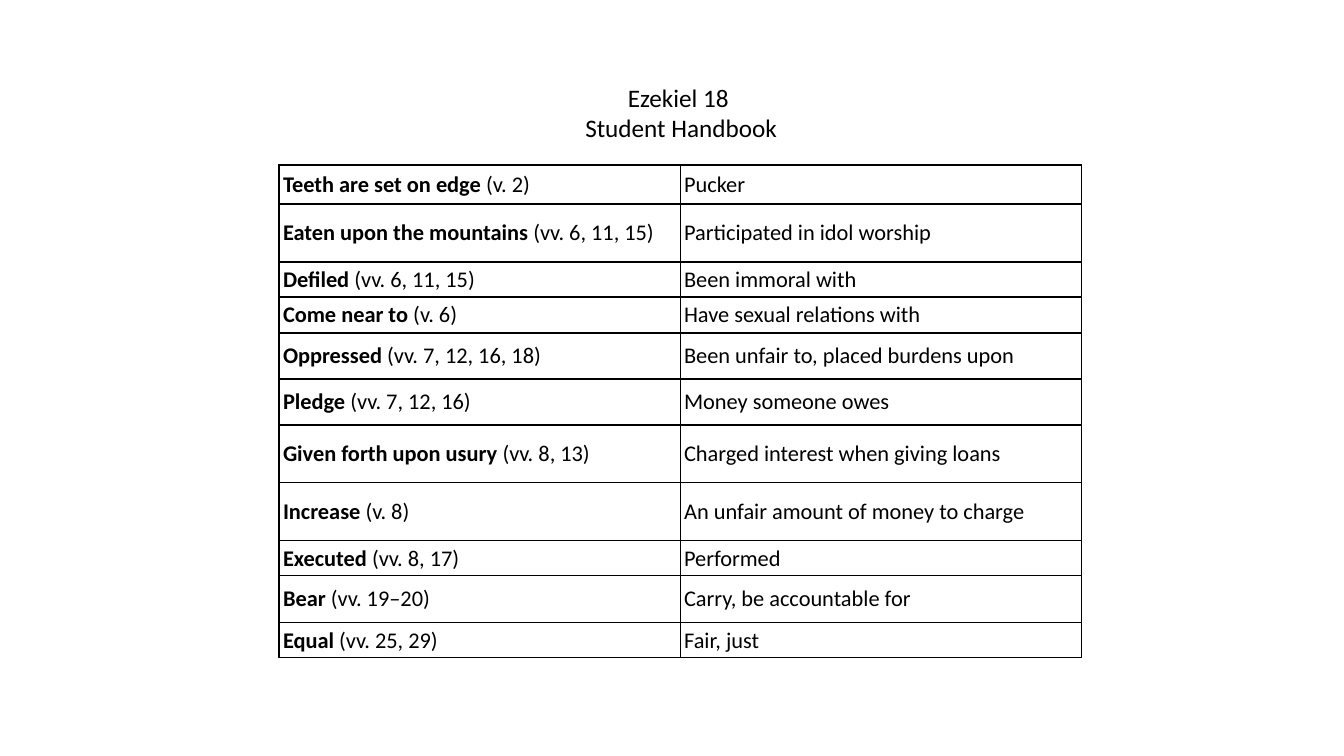
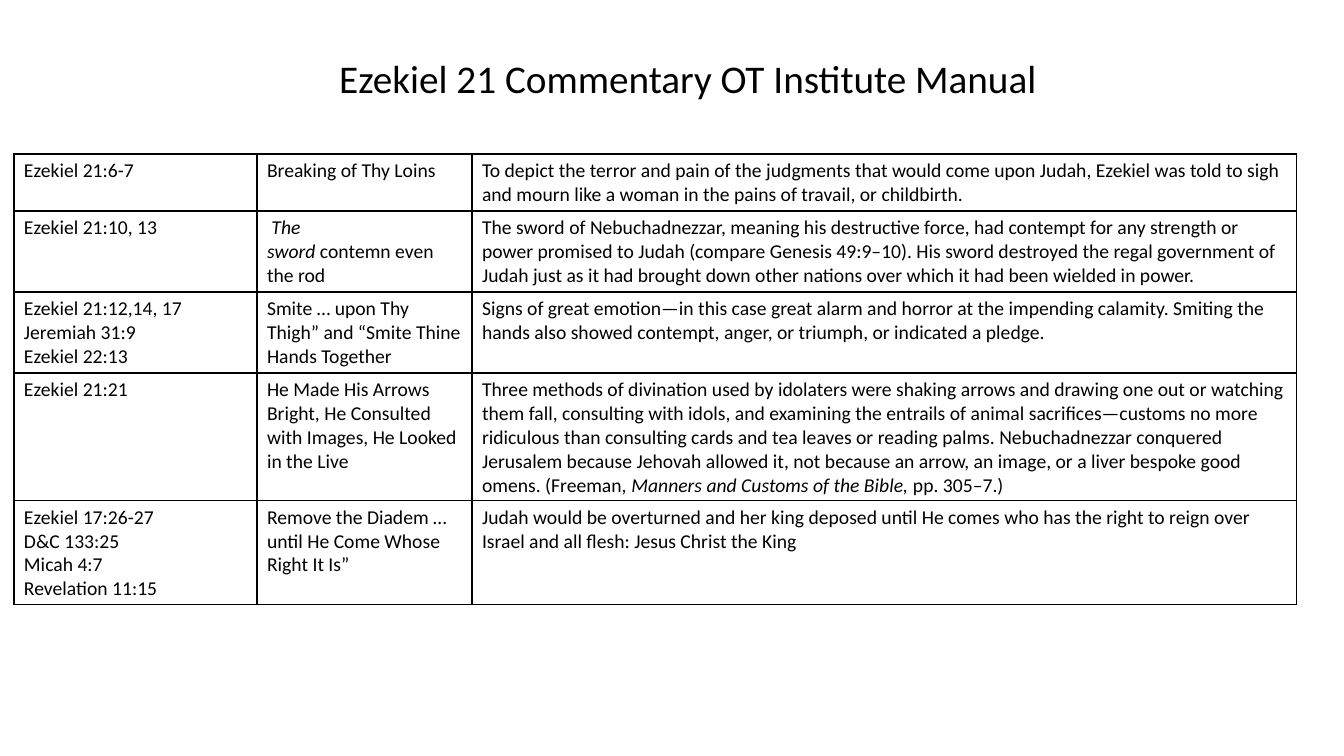
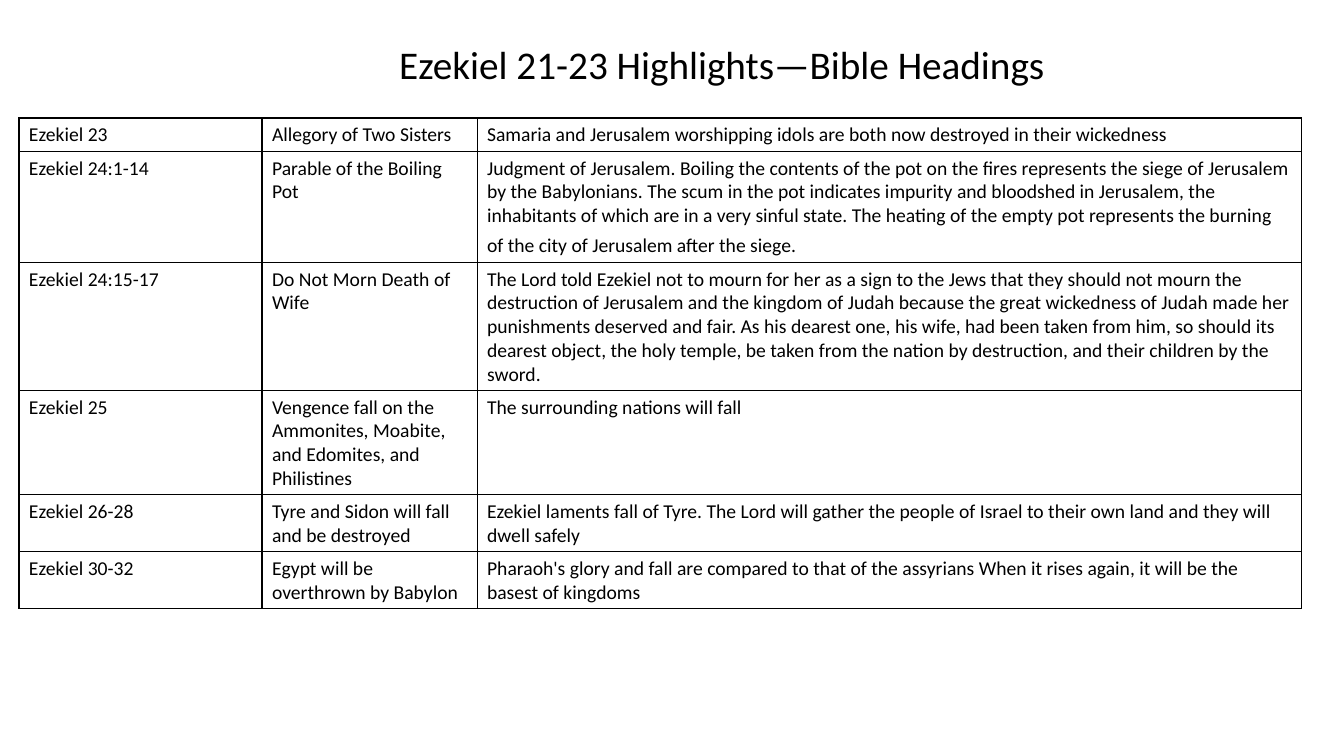
from dataclasses import dataclass
from typing import Optional, Tuple, Union

from lxml.etree import SubElement
from pptx import Presentation
from pptx.dml.color import RGBColor
from pptx.enum.text import MSO_ANCHOR, MSO_AUTO_SIZE, PP_ALIGN
from pptx.oxml.ns import qn
from pptx.util import Emu, Inches, Pt

NBSP = chr(160)
PX_PER_INCH = 100.8


def px(length: int) -> Emu:
    return Emu(round(length * 914400 / PX_PER_INCH))


# Shared look
@dataclass(frozen=True)
class Theme:
    font: str = "Calibri"
    ink: str = "000000"
    border_pt: int = 1
    heading_pt: int = 28
    small_heading_pt: int = 18
    glossary_pt: int = 16
    commentary_pt: int = 14


THEME = Theme()


@dataclass(frozen=True)
class Run:
    text: str
    bold: bool = False
    italic: bool = False
    size: Optional[int] = None


Content = Union[str, Tuple[Run, ...]]


@dataclass(frozen=True)
class Heading:
    text: str
    box: Tuple[int, int, int, int]
    size: int = THEME.heading_pt
    align: PP_ALIGN = PP_ALIGN.LEFT


@dataclass(frozen=True)
class Grid:
    left: int
    top: int
    columns: Tuple[int, ...]
    row_heights: Tuple[int, ...]
    rows: Tuple[Tuple[Content, ...], ...]
    size: int = THEME.commentary_pt
    anchor: MSO_ANCHOR = MSO_ANCHOR.TOP
    margins: Tuple[int, int] = (10, 5)


@dataclass(frozen=True)
class Page:
    heading: Heading
    grid: Grid


# Slide 1: words explained in Ezekiel 18
GLOSSARY = (
    ("Teeth are set on edge", "(v. 2)", "Pucker"),
    ("Eaten upon the mountains", "(vv. 6, 11, 15)", "Participated in idol worship"),
    ("Defiled", "(vv. 6, 11, 15)", "Been immoral with"),
    ("Come near to", "(v. 6)", "Have sexual relations with"),
    ("Oppressed", "(vv. 7, 12, 16, 18)", "Been unfair to, placed burdens upon"),
    ("Pledge", "(vv. 7, 12, 16)", "Money someone owes"),
    ("Given forth upon usury", "(vv. 8, 13)", "Charged interest when giving loans"),
    ("Increase", "(v. 8)", "An unfair amount of money to charge"),
    ("Executed", "(vv. 8, 17)", "Performed"),
    ("Bear", "(vv. 19–20)", "Carry, be accountable for"),
    ("Equal", "(vv. 25, 29)", "Fair, just"),
)

# Slide 2: commentary on Ezekiel 21
COMMENTARY = (
    ("Ezekiel 21:6-7", "Breaking of Thy Loins",
     "To depict the terror and pain of the judgments that would come upon Judah, Ezekiel was told "
     "to sigh and mourn like a woman in the pains of travail, or childbirth."),
    ("Ezekiel 21:10, 13",
     (Run(" The sword", italic=True), Run(f"{NBSP}contemn{NBSP}even the rod")),
     "The sword of Nebuchadnezzar, meaning his destructive force, had contempt for any strength or "
     f"power promised to Judah (compare{NBSP}Genesis 49:9–10). His sword destroyed the regal "
     "government of Judah just as it had brought down other nations over which it had been "
     "wielded in power."),
    ("Ezekiel 21:12,14, 17\nJeremiah 31:9\nEzekiel 22:13",
     "Smite … upon Thy Thigh” and “Smite Thine Hands Together",
     "Signs of great emotion—in this case great alarm and horror at the impending calamity. "
     "Smiting the hands also showed contempt, anger, or triumph, or indicated a pledge."),
    ("Ezekiel 21:21",
     "He Made His Arrows Bright, He Consulted with Images, He Looked in the Live",
     (Run("Three methods of divination used by idolaters were shaking arrows and drawing one out or "
          "watching them fall, consulting with idols, and examining the entrails of animal "
          "sacrifices—customs no more ridiculous than consulting cards and tea leaves or reading "
          "palms. Nebuchadnezzar conquered Jerusalem because Jehovah allowed it, not because an "
          f"arrow, an image, or a liver bespoke good omens. (Freeman,{NBSP}"),
      Run("Manners and Customs of the Bible,", italic=True),
      Run(f"{NBSP}pp.{NBSP}305–7.)"))),
    ("Ezekiel 17:26-27\nD&C 133:25\nMicah 4:7\nRevelation 11:15",
     "Remove the Diadem … until He Come Whose Right It Is”",
     "Judah would be overturned and her king deposed until He comes who has the right to reign "
     f"over Israel and all flesh:{NBSP}Jesus Christ{NBSP}the King"),
)

# Slide 3: chapter highlights
HIGHLIGHTS = (
    ("Ezekiel 23", "Allegory of Two Sisters",
     "Samaria and Jerusalem worshipping idols are both now destroyed in their wickedness"),
    ("Ezekiel 24:1-14", "Parable of the Boiling Pot",
     (Run("Judgment of Jerusalem. Boiling the contents of the pot on the fires represents the siege "
          "of Jerusalem by the Babylonians. The scum in the pot indicates impurity and bloodshed "
          "in Jerusalem, the inhabitants of which are in a very sinful state. The heating of the "
          "empty pot represents the burning of the city of Jerusalem after the siege."),
      Run(NBSP, size=THEME.small_heading_pt))),
    ("Ezekiel 24:15-17", "Do Not Morn Death of Wife",
     "The Lord told Ezekiel not to mourn for her as a sign to the Jews that they should not mourn "
     "the destruction of Jerusalem and the kingdom of Judah because the great wickedness of Judah "
     f"made her punishments deserved and fair.{NBSP}As his dearest one, his wife, had been taken "
     "from him, so should its dearest object, the holy temple, be taken from the nation by "
     "destruction, and their children by the sword."),
    ("Ezekiel 25", "Vengence fall on the Ammonites, Moabite, and Edomites, and Philistines",
     "The surrounding nations will fall"),
    ("Ezekiel 26-28", "Tyre and Sidon will fall and be destroyed",
     "Ezekiel laments fall of Tyre. The Lord will gather the people of Israel to their own land "
     "and they will dwell safely"),
    ("Ezekiel 30-32", "Egypt will be overthrown by Babylon",
     "Pharaoh's glory and fall are compared to that of the assyrians When it rises again, it will "
     "be the basest of kingdoms"),
)

COMMENTARY_COLUMNS = (243, 215, 824)

PAGES = (
    Page(
        Heading("Ezekiel 18 \nStudent Handbook", (555, 77, 252, 72),
                THEME.small_heading_pt, PP_ALIGN.CENTER),
        Grid(279, 165, (401, 401), (39, 58, 35, 36, 46, 46, 58, 58, 35, 47, 35),
             tuple(((Run(term, bold=True), Run(NBSP + verses)), meaning)
                   for term, verses, meaning in GLOSSARY),
             THEME.glossary_pt, MSO_ANCHOR.MIDDLE, (4, 4)),
    ),
    Page(
        Heading("Ezekiel 21 Commentary OT Institute Manual", (329, 49, 750, 57)),
        Grid(14, 154, COMMENTARY_COLUMNS, (57, 81, 81, 127, 104), COMMENTARY),
    ),
    Page(
        Heading("Ezekiel 21-23 Highlights—Bible Headings", (389, 35, 750, 57)),
        Grid(19, 118, COMMENTARY_COLUMNS, (33, 111, 128, 104, 57, 57), HIGHLIGHTS),
    ),
)


def write_text(frame, content: Content, *, size: int, align: PP_ALIGN = PP_ALIGN.LEFT) -> None:
    """Fill a text frame; each line of a plain string is a paragraph."""
    if isinstance(content, str):
        paragraphs = [(Run(line),) for line in content.split("\n")]
    else:
        paragraphs = [content]
    for index, runs in enumerate(paragraphs):
        paragraph = frame.add_paragraph() if index else frame.paragraphs[0]
        paragraph.alignment = align
        for part in runs:
            run = paragraph.add_run()
            run.text = part.text
            run.font.name = THEME.font
            run.font.size = Pt(part.size or size)
            run.font.bold = part.bold
            run.font.italic = part.italic
            run.font.color.rgb = RGBColor.from_string(THEME.ink)


def draw_heading(slide, heading: Heading) -> None:
    title = slide.shapes.title
    title.left, title.top, title.width, title.height = map(px, heading.box)
    frame = title.text_frame
    frame.word_wrap = True
    frame.auto_size = MSO_AUTO_SIZE.SHAPE_TO_FIT_TEXT
    frame.vertical_anchor = MSO_ANCHOR.TOP
    write_text(frame, heading.text, size=heading.size, align=heading.align)


def add_borders(cell) -> None:
    properties = cell._tc.get_or_add_tcPr()
    for position, side in enumerate(("lnL", "lnR", "lnT", "lnB")):
        line = SubElement(properties, qn(f"a:{side}"), w=str(Pt(THEME.border_pt)))
        fill = SubElement(line, qn("a:solidFill"))
        SubElement(fill, qn("a:srgbClr"), val=THEME.ink)
        properties.insert(position, line)


def draw_grid(slide, grid: Grid) -> None:
    table = slide.shapes.add_table(
        len(grid.rows), len(grid.columns), px(grid.left), px(grid.top),
        px(sum(grid.columns)), px(sum(grid.row_heights))).table
    table.first_row = table.horz_banding = False
    for column, width in zip(table.columns, grid.columns):
        column.width = px(width)
    for row, height, contents in zip(table.rows, grid.row_heights, grid.rows):
        row.height = px(height)
        for cell, content in zip(row.cells, contents):
            cell.fill.background()
            cell.vertical_anchor = grid.anchor
            cell.margin_left = cell.margin_right = px(grid.margins[0])
            cell.margin_top = cell.margin_bottom = px(grid.margins[1])
            add_borders(cell)
            write_text(cell.text_frame, content, size=grid.size)


def main() -> None:
    deck = Presentation()
    deck.slide_width, deck.slide_height = Inches(13.33), Inches(7.5)
    title_only = deck.slide_layouts.get_by_name("Title Only")
    for page in PAGES:
        slide = deck.slides.add_slide(title_only)
        draw_heading(slide, page.heading)
        draw_grid(slide, page.grid)
    deck.save("out.pptx")


if __name__ == "__main__":
    main()
